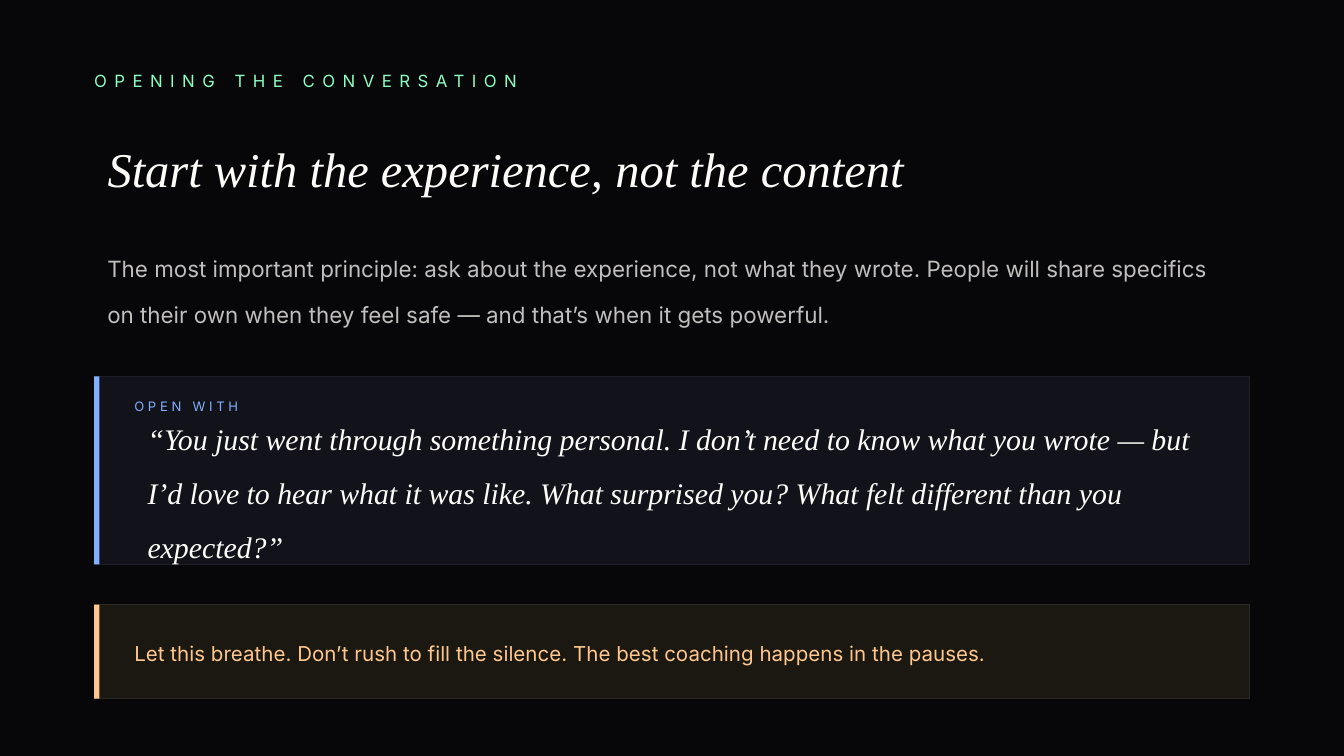
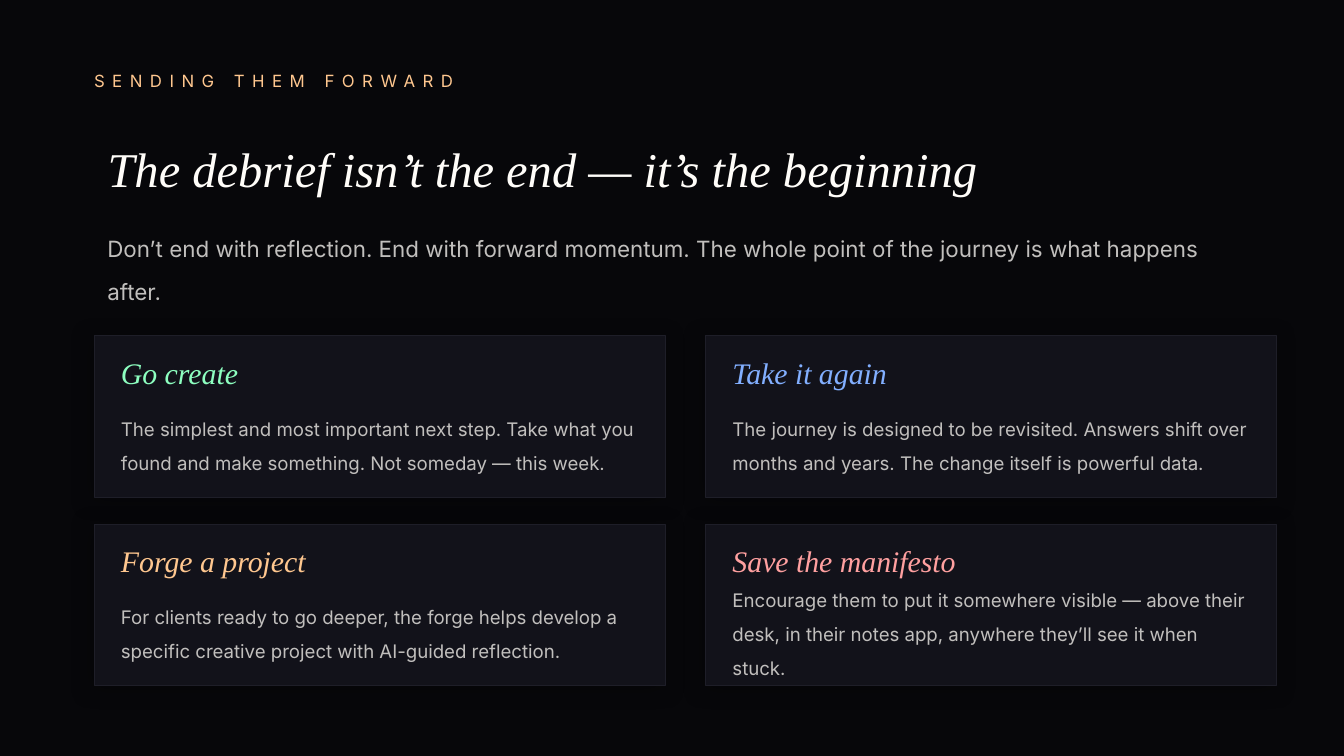
"""Build two dark coaching slides: opening the conversation and sending clients forward."""
from dataclasses import dataclass
from typing import NamedTuple, Optional

from lxml.etree import SubElement
from pptx import Presentation
from pptx.dml.color import RGBColor
from pptx.enum.shapes import MSO_SHAPE
from pptx.enum.text import MSO_ANCHOR, MSO_AUTO_SIZE, PP_ALIGN
from pptx.oxml.ns import qn
from pptx.presentation import Presentation as Deck
from pptx.shapes.autoshape import Shape
from pptx.slide import Slide
from pptx.util import Inches, Pt


@dataclass(frozen=True)
class Theme:
    """Colours, fonts and type sizes shared by the slides."""
    backdrop: str = "07070A"
    ivory: str = "FFFDF9"
    grey: str = "C1BFBD"
    mint: str = "8DFFC0"
    blue: str = "82AFFF"
    amber: str = "FFC78F"
    rose: str = "FFA0A0"
    panel: str = "12121A"
    panel_edge: str = "1E1E28"
    warm_panel: str = "1A1810"
    warm_edge: str = "2A2820"
    shadow: str = "000000"
    sans: str = "Inter"
    serif: str = "Times New Roman"
    title_size: float = 26
    accent_size: float = 16
    lead_size: float = 12
    tip_size: float = 11
    detail_size: float = 10
    eyebrow_size: float = 9
    label_size: float = 7


class Box(NamedTuple):
    """Position and size in inches."""
    left: float
    top: float
    width: float
    height: float


@dataclass(frozen=True)
class Style:
    """Look of one kind of text."""
    size: float
    color: str
    font: str = "Inter"
    italic: Optional[bool] = None
    tracking: float = 0
    line_spacing: Optional[float] = None
    padded: bool = False


@dataclass(frozen=True)
class Callout:
    """Panel with a coloured bar on its left edge."""
    box: Box
    accent: str
    fill: str
    edge: str


@dataclass(frozen=True)
class NextStep:
    """Card with a heading and a short explanation."""
    heading: str
    detail: str
    accent: str


THEME = Theme()
MARGIN = 0.7
CONTENT_WIDTH = 8.6
BAR_WIDTH = 0.04
INSET = 1.0
CARD = Box(MARGIN, 2.5, 4.25, 1.2)
CARD_PADDING = 0.2
COLUMN_GAP = 0.3
ROW_GAP = 0.2

QUESTION = Callout(Box(MARGIN, 2.8, CONTENT_WIDTH, 1.4), THEME.blue, THEME.panel, THEME.panel_edge)
TIP = Callout(Box(MARGIN, 4.5, CONTENT_WIDTH, 0.7), THEME.amber, THEME.warm_panel, THEME.warm_edge)

NEXT_STEPS = (
    NextStep("Go create",
             "The simplest and most important next step. Take what you found and make something. "
             "Not someday — this week.", THEME.mint),
    NextStep("Take it again",
             "The journey is designed to be revisited. Answers shift over months and years. "
             "The change itself is powerful data.", THEME.blue),
    NextStep("Forge a project",
             "For clients ready to go deeper, the forge helps develop a specific creative project "
             "with AI-guided reflection.", THEME.amber),
    NextStep("Save the manifesto",
             "Encourage them to put it somewhere visible — above their desk, in their notes app, "
             "anywhere they’ll see it when stuck.", THEME.rose),
)


def serif_style(size: float, color: str, **options) -> Style:
    """Return an italic serif style."""
    return Style(size, color, THEME.serif, italic=True, **options)


def place(shape: Shape, box: Box) -> None:
    """Move and size a shape."""
    shape.left, shape.top, shape.width, shape.height = map(Inches, box)


def write(shape: Shape, text: str, style: Style) -> None:
    """Fill a shape with one styled run."""
    frame = shape.text_frame
    frame.word_wrap = True
    frame.auto_size = MSO_AUTO_SIZE.NONE
    frame.vertical_anchor = MSO_ANCHOR.MIDDLE
    side, edge = (0.1, 0.05) if style.padded else (0, 0)
    frame.margin_left = frame.margin_right = Inches(side)
    frame.margin_top = frame.margin_bottom = Inches(edge)
    paragraph = frame.paragraphs[0]
    paragraph.alignment = PP_ALIGN.LEFT
    if style.line_spacing:
        paragraph.line_spacing = style.line_spacing
    run = paragraph.add_run()
    run.text = text
    run.font.name = style.font
    run.font.size = Pt(style.size)
    run.font.italic = style.italic
    run.font.color.rgb = RGBColor.from_string(style.color)
    if style.tracking:
        run._r.get_or_add_rPr().set("spc", str(int(style.tracking * 100)))


def add_text(slide: Slide, box: Box, text: str, style: Style) -> None:
    """Add a text box."""
    write(slide.shapes.add_textbox(*map(Inches, box)), text, style)


def add_panel(slide: Slide, box: Box, fill: str, edge: Optional[str] = None) -> Shape:
    """Add a flat rectangle, with a thin outline if an edge colour is given."""
    panel = slide.shapes.add_shape(MSO_SHAPE.RECTANGLE, *map(Inches, box))
    panel.shadow.inherit = False
    panel.fill.solid()
    panel.fill.fore_color.rgb = RGBColor.from_string(fill)
    if edge:
        panel.line.color.rgb = RGBColor.from_string(edge)
        panel.line.width = Pt(0.5)
    else:
        panel.line.fill.background()
    return panel


def cast_shadow(panel: Shape) -> None:
    """Give a panel a soft outer shadow."""
    effects = panel._element.spPr.find(qn("a:effectLst"))
    outer = SubElement(effects, qn("a:outerShdw"), blurRad=str(Pt(12)), dist=str(Pt(2)),
                       dir=str(135 * 60000), algn="bl", rotWithShape="0")
    color = SubElement(outer, qn("a:srgbClr"), val=THEME.shadow)
    SubElement(color, qn("a:alpha"), val="30000")


def add_callout(slide: Slide, callout: Callout) -> None:
    """Draw a panel and its accent bar."""
    add_panel(slide, callout.box, callout.fill, callout.edge)
    add_panel(slide, callout.box._replace(width=BAR_WIDTH), callout.accent)


def add_next_step(slide: Slide, step: NextStep, index: int) -> None:
    """Draw a card at its place in the two-column grid."""
    row, column = divmod(index, 2)
    card = CARD._replace(left=CARD.left + column * (CARD.width + COLUMN_GAP),
                         top=CARD.top + row * (CARD.height + ROW_GAP))
    cast_shadow(add_panel(slide, card, THEME.panel, THEME.panel_edge))
    left, width = card.left + CARD_PADDING, card.width - 2 * CARD_PADDING
    add_text(slide, Box(left, card.top + 0.12, width, 0.3), step.heading,
             serif_style(THEME.accent_size, step.accent))
    add_text(slide, Box(left, card.top + 0.45, width, 0.65), step.detail,
             Style(THEME.detail_size, THEME.grey, line_spacing=1.5))


def start_slide(deck: Deck, eyebrow: str, accent: str, title: str) -> Slide:
    """Add a slide with its background, eyebrow and title."""
    slide = deck.slides.add_slide(deck.slide_layouts.get_by_name("Title Only"))
    slide.background.fill.solid()
    slide.background.fill.fore_color.rgb = RGBColor.from_string(THEME.backdrop)
    add_text(slide, Box(MARGIN, 0.4, 8, 0.4), eyebrow,
             Style(THEME.eyebrow_size, accent, tracking=4))
    place(slide.shapes.title, Box(MARGIN, 0.9, 8, 0.7))
    write(slide.shapes.title, title, serif_style(THEME.title_size, THEME.ivory, padded=True))
    return slide


def add_lead(slide: Slide, text: str, height: float, line_spacing: float) -> None:
    """Add the introductory paragraph below the title."""
    add_text(slide, Box(MARGIN, 1.7, CONTENT_WIDTH, height), text,
             Style(THEME.lead_size, THEME.grey, line_spacing=line_spacing, padded=True))


def build_opening(deck: Deck) -> None:
    """Build the slide on opening the conversation."""
    slide = start_slide(deck, "OPENING THE CONVERSATION", THEME.mint,
                        "Start with the experience, not the content")
    add_lead(slide, "The most important principle: ask about the experience, not what they wrote. "
             "People will share specifics on their own when they feel safe — and that’s when it "
             "gets powerful.", 0.8, 1.7)
    add_callout(slide, QUESTION)
    add_text(slide, Box(INSET, 2.9, 8, 0.25), "OPEN WITH",
             Style(THEME.label_size, THEME.blue, tracking=2))
    add_text(slide, Box(INSET, 3.2, 8.1, 0.8),
             "“You just went through something personal. I don’t need to know what you wrote — but "
             "I’d love to hear what it was like. What surprised you? What felt different than you "
             "expected?”",
             serif_style(THEME.accent_size, THEME.ivory, line_spacing=1.5, padded=True))
    add_callout(slide, TIP)
    add_text(slide, Box(INSET, 4.55, 8.1, 0.55),
             "Let this breathe. Don’t rush to fill the silence. The best coaching happens in the "
             "pauses.", Style(THEME.tip_size, THEME.amber, line_spacing=1.4))


def build_forward(deck: Deck) -> None:
    """Build the slide on sending clients forward."""
    slide = start_slide(deck, "SENDING THEM FORWARD", THEME.amber,
                        "The debrief isn’t the end — it’s the beginning")
    add_lead(slide, "Don’t end with reflection. End with forward momentum. The whole point of the "
             "journey is what happens after.", 0.5, 1.6)
    for index, step in enumerate(NEXT_STEPS):
        add_next_step(slide, step, index)


def main() -> None:
    """Build and save the deck."""
    deck = Presentation()
    deck.slide_width = Inches(10)
    deck.slide_height = deck.slide_width * 9 // 16
    build_opening(deck)
    build_forward(deck)
    deck.save("out.pptx")


if __name__ == "__main__":
    main()
